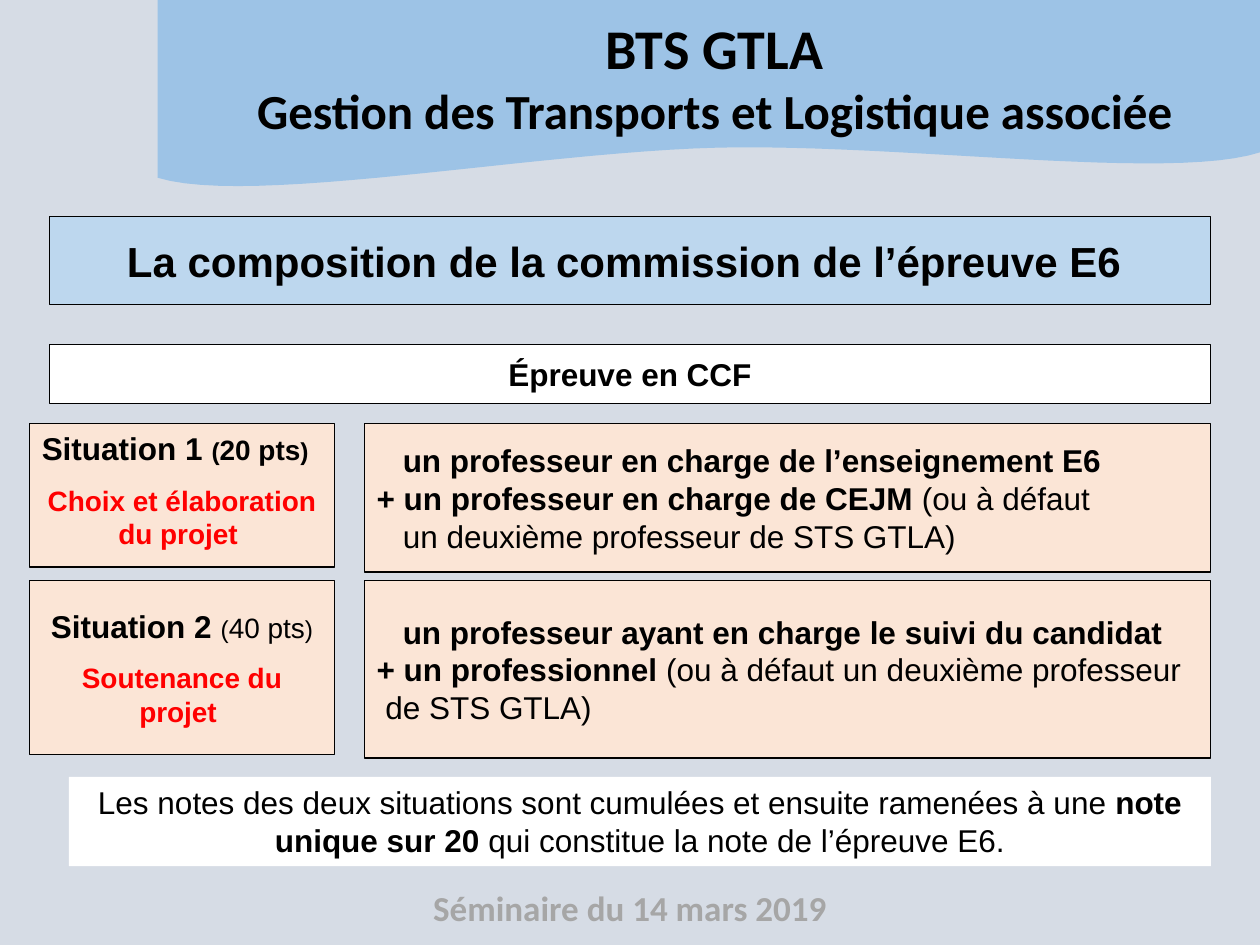
import pptx
import pptx.util
import pptx.dml.color
import pptx.enum.shapes
import pptx.enum.text

Pt = pptx.util.Pt
ALIGN = pptx.enum.text.PP_ALIGN
ANCHOR = pptx.enum.text.MSO_ANCHOR


def color(hex_value):
    return pptx.dml.color.RGBColor.from_string(hex_value)


def curve_points(start, first, second, end, steps=24):
    for step in range(1, steps + 1):
        t = step / steps
        u = 1 - t
        yield tuple(
            u**3 * a + 3 * u * u * t * b + 3 * u * t * t * c + t**3 * d
            for a, b, c, d in zip(start, first, second, end)
        )


class SlideBuilder:
    black, white, red, gray = "000000", "FFFFFF", "FF0000", "A6A6A6"
    background, wave_blue, title_blue, peach = "D6DCE5", "9DC3E6", "BDD7EE", "FBE5D6"
    body_font, banner_font = "Arial", "Calibri"

    def __init__(self, slide):
        self.slide = slide
        fill = slide.background.fill
        fill.solid()
        fill.fore_color.rgb = color(self.background)

    def set_text(self, shape, paragraphs, font=None, anchor=ANCHOR.MIDDLE, wrap=True):
        frame = shape.text_frame
        frame.word_wrap = wrap
        frame.auto_size = pptx.enum.text.MSO_AUTO_SIZE.NONE
        frame.vertical_anchor = anchor
        frame.text = "\n".join("" for _ in paragraphs)
        for paragraph, content in zip(frame.paragraphs, paragraphs):
            paragraph.alignment = content.get("align", ALIGN.CENTER)
            paragraph.space_before = Pt(content.get("before", 0))
            if "margin" in content:
                properties = paragraph._p.get_or_add_pPr()
                properties.set("marL", str(Pt(content["margin"])))
                properties.set("indent", "0")
            for text, size, bold in content["runs"]:
                run = paragraph.add_run()
                run.text = text
                run.font.size = Pt(size)
                run.font.bold = bold
                run.font.name = font or self.body_font
                run.font.color.rgb = color(content.get("color", self.black))

    def paint(self, shape, fill, outlined):
        shape.fill.solid()
        shape.fill.fore_color.rgb = color(fill)
        if outlined:
            shape.line.color.rgb = color(self.black)
            shape.line.width = Pt(0.75)
        else:
            shape.line.fill.background()

    def title(self, area, fill, paragraphs):
        heading = self.slide.shapes.title
        heading.left, heading.top, heading.width, heading.height = map(Pt, area)
        self.paint(heading, fill, True)
        self.set_text(heading, paragraphs, wrap=False)

    def box(self, area, fill, paragraphs, outlined=True, **layout):
        panel = self.slide.shapes.add_shape(
            pptx.enum.shapes.MSO_SHAPE.RECTANGLE, *map(Pt, area)
        )
        panel.shadow.inherit = False
        self.paint(panel, fill, outlined)
        self.set_text(panel, paragraphs, **layout)

    def label(self, area, paragraphs):
        caption = self.slide.shapes.add_textbox(*map(Pt, area))
        self.set_text(caption, paragraphs, self.banner_font, ANCHOR.TOP)

    def wave(self, fill):
        right_edge, crest, left_edge = (720, 87.1), (410.4, 84.4), (90, 101.6)
        outline = [(720, 0), right_edge]
        outline += curve_points(right_edge, (668.9, 103.7), (515.5, 82), crest)
        outline += curve_points(crest, (305.3, 87), (143.3, 118), left_edge)
        builder = self.slide.shapes.build_freeform(Pt(90), 0)
        builder.add_line_segments([(Pt(x), Pt(y)) for x, y in outline], close=True)
        banner = builder.convert_to_shape()
        banner.shadow.inherit = False
        self.paint(banner, fill, False)


def main():
    deck = pptx.Presentation()
    deck.slide_width, deck.slide_height = Pt(720), Pt(540)
    page = SlideBuilder(deck.slides.add_slide(deck.slide_layouts[5]))

    page.wave(page.wave_blue)
    page.label((135.4, 4.3, 545.8, 80), [
        {"runs": [("BTS GTLA", 32, True)]},
        {"runs": [("Gestion des Transports et Logistique associée", 28, True)]},
    ])
    page.label((180, 503.3, 360, 31.5), [
        {"runs": [("Séminaire du 14 mars 2019", 20, True)], "color": page.gray},
    ])
    page.title((28.1, 123.8, 663.8, 50.4), page.title_blue, [
        {"runs": [("La composition de la commission de l’épreuve E6 ", 24, True)]},
    ])
    page.box((28.1, 196.8, 663.8, 33.8), page.white, [
        {"runs": [("Épreuve en CCF", 18, True)]},
    ])

    situations = [
        {
            "top": 241.9, "heights": (82.1, 85), "anchor": ANCHOR.TOP,
            "align": ALIGN.LEFT, "name": "Situation 1 ", "points": "20 pts",
            "bold_points": True, "task": "Choix et élaboration du projet ",
            "jury": [
                (15, [("un professeur en charge de l’enseignement E6", 18, True)]),
                (0, [("+ un professeur en charge de CEJM ", 18, True),
                     ("(ou à défaut", 18, False)]),
                (15, [("un deuxième professeur de STS GTLA)", 18, False)]),
            ],
        },
        {
            "top": 331.7, "heights": (99.6, 101.5), "anchor": ANCHOR.MIDDLE,
            "align": ALIGN.CENTER, "name": "Situation 2 ", "points": "40 pts",
            "bold_points": False, "task": "Soutenance du projet ",
            "jury": [
                (15, [("un professeur ayant en charge le suivi du candidat", 18, True)]),
                (0, [("+ un professionnel ", 18, True),
                     ("(ou à défaut un deuxième professeur", 18, False)]),
                (5, [("de STS GTLA)", 18, False)]),
            ],
        },
    ]
    for situation in situations:
        task_height, jury_height = situation["heights"]
        bold = situation["bold_points"]
        page.box((16.8, situation["top"], 174.4, task_height), page.peach, [
            {"align": situation["align"], "runs": [
                (situation["name"], 18, True), ("(", 14, bold),
                (situation["points"], 16, bold), (")", 14, bold),
            ]},
            {"runs": [(situation["task"], 16, True)], "color": page.red, "before": 9},
        ], anchor=situation["anchor"])
        page.box((208.1, situation["top"], 483.8, jury_height), page.peach, [
            {"align": ALIGN.LEFT, "margin": margin, "runs": runs}
            for margin, runs in situation["jury"]
        ], wrap=False)

    page.box((39.4, 444, 652.5, 51), page.white, [
        {"runs": [
            ("Les notes des deux situations sont cumulées et ensuite ramenées à une ", 18, False),
            ("note unique sur 20", 18, True),
            (" qui constitue la note de l’épreuve E6.", 18, False),
        ]},
    ], outlined=False, anchor=ANCHOR.TOP)
    deck.save("out.pptx")


if __name__ == "__main__":
    main()
